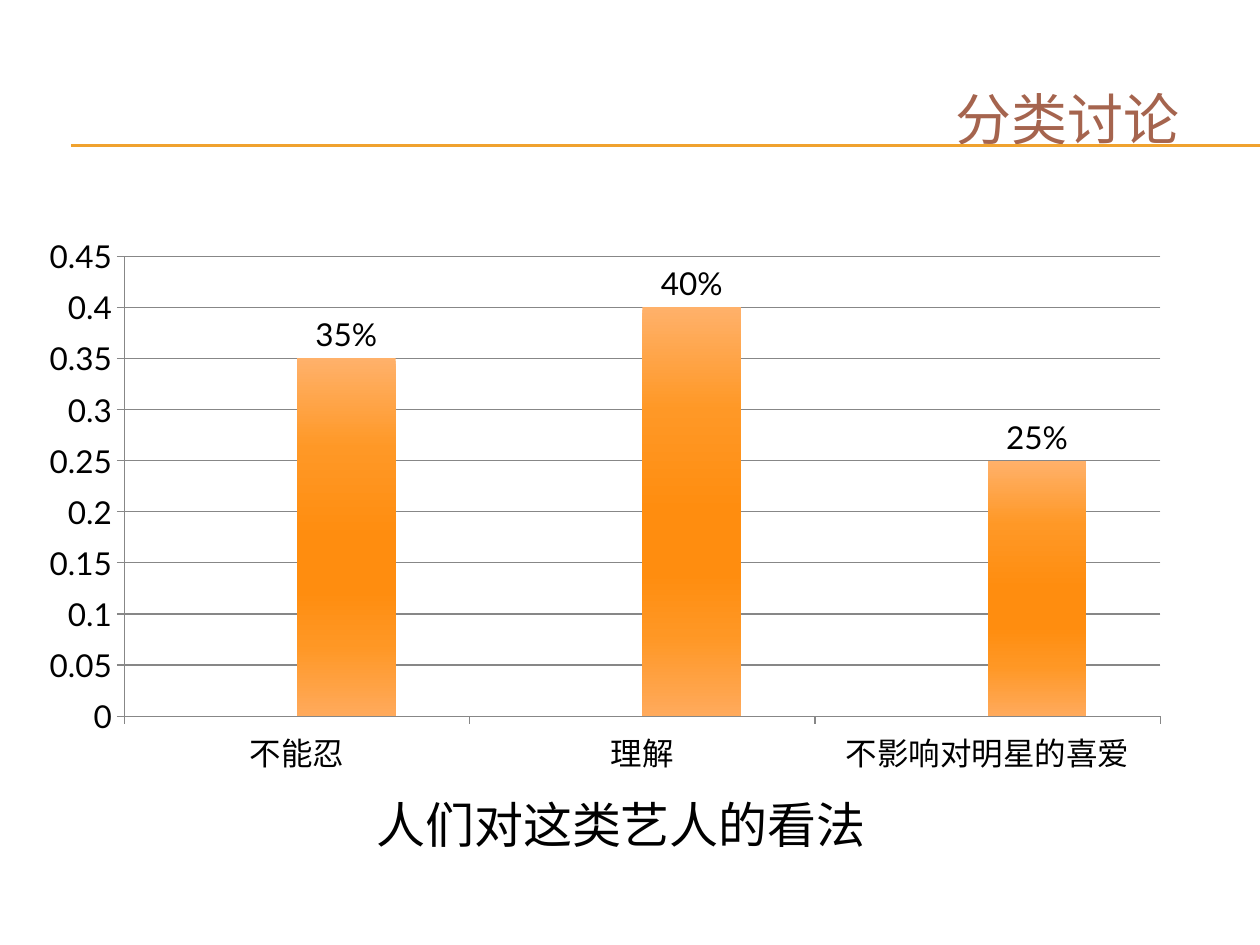
"""Build the survey slide on how people see this kind of artist."""
from lxml import etree
from pptx import Presentation
from pptx import util as u
from pptx.chart import data
from pptx.dml import color
from pptx.enum import chart as ch, shapes, text
from pptx.oxml import ns, parse_xml

PX_PER_INCH = 126
AMBER = "F0A22E"
GREY = "878787"
BLACK = "000000"
BAR_STOPS = [(0, "FFB16A"), (25, "FF9826"), (50, "FF8D0F"),
             (65, "FF8D0F"), (80, "FF9724"), (100, "FFAA5C")]
OPINIONS = {"不能忍": 0.35, "理解": 0.4, "不影响对明星的喜爱": 0.25}


def px(length):
    return u.Inches(length / PX_PER_INCH)


def rgb(value):
    return color.RGBColor.from_string(value)


def add_rule(slide, y):
    rule = slide.shapes.add_connector(
        shapes.MSO_CONNECTOR.STRAIGHT, px(71), px(y), px(1260), px(y))
    rule.line.color.rgb = rgb(AMBER)
    rule.line.width = u.Pt(0.75)
    etree.SubElement(rule._element.spPr, ns.qn("a:effectLst"))


def write_text(box, words, size, fill, align, left, top, width, height):
    box.left, box.top, box.width, box.height = map(px, (left, top, width, height))
    frame = box.text_frame
    frame.word_wrap = True
    frame.vertical_anchor = text.MSO_ANCHOR.TOP
    frame.auto_size = text.MSO_AUTO_SIZE.SHAPE_TO_FIT_TEXT
    paragraph = frame.paragraphs[0]
    paragraph.alignment = align
    run = paragraph.add_run()
    run.text = words
    run.font.name = "Arial"
    run.font.size = u.Pt(size)
    run.font.color.rgb = rgb(fill)


def fill_gradient(series, stops):
    series.format.fill.gradient()
    old = series._element.spPr.find(ns.qn("a:gradFill"))
    marks = "".join(f'<a:gs pos="{pos * 1000}"><a:srgbClr val="{value}"/></a:gs>'
                    for pos, value in stops)
    gradient = parse_xml(
        f'<a:gradFill {ns.nsdecls("a")} rotWithShape="1"><a:gsLst>{marks}</a:gsLst>'
        '<a:lin ang="5400000" scaled="0"/></a:gradFill>')
    old.getparent().replace(old, gradient)


def set_plot_area(chart, x, y, w, h):
    area = chart._chartSpace.chart.plotArea
    for old in area.findall(ns.qn("c:layout")):
        area.remove(old)
    sizes = "".join(f'<c:{key} val="{value}"/>'
                    for key, value in zip("xywh", (x, y, w, h)))
    area.insert(0, parse_xml(
        f'<c:layout {ns.nsdecls("c")}><c:manualLayout><c:layoutTarget val="inner"/>'
        f'<c:xMode val="edge"/><c:yMode val="edge"/>{sizes}</c:manualLayout></c:layout>'))


def style_axes(chart):
    values = chart.value_axis
    values.minimum_scale, values.maximum_scale, values.major_unit = 0, 0.45, 0.05
    values.has_major_gridlines = True
    values.tick_labels.number_format = "General"
    values.tick_labels.number_format_is_linked = False
    for axis in (chart.category_axis, values):
        axis.major_tick_mark = ch.XL_TICK_MARK.OUTSIDE
    for part in (chart.category_axis, values, values.major_gridlines):
        part.format.line.color.rgb = rgb(GREY)
        part.format.line.width = u.Pt(0.75)


def add_opinion_chart(slide):
    survey = data.CategoryChartData()
    survey.categories = list(OPINIONS)
    survey.add_series("Series 1", [None] * len(OPINIONS))
    survey.add_series("Series 2", OPINIONS.values())
    chart = slide.shapes.add_chart(
        ch.XL_CHART_TYPE.COLUMN_CLUSTERED, px(29), px(217), px(1191), px(561),
        survey).chart
    chart.has_legend = False
    chart.has_title = False
    chart.font.name = "Lato"
    chart.font.size = u.Pt(18)
    chart.font.color.rgb = rgb(BLACK)
    style_axes(chart)
    set_plot_area(chart, 0.08, 0.07, 0.87, 0.82)

    plot = chart.plots[0]
    plot.vary_by_categories = False
    plot.gap_width, plot.overlap = 150, 0
    blank, shares = plot.series
    blank.format.fill.solid()
    blank.format.fill.fore_color.rgb = rgb(AMBER)
    fill_gradient(shares, BAR_STOPS)
    labels = shares.data_labels
    labels.show_value = True
    labels.number_format = "0%"
    labels.number_format_is_linked = False
    labels.position = ch.XL_LABEL_POSITION.OUTSIDE_END


def main():
    deck = Presentation()
    deck.slide_width, deck.slide_height = px(1260), px(945)
    slide = deck.slides.add_slide(deck.slide_layouts[5])
    for y in (145, 146):
        add_rule(slide, y)
    add_opinion_chart(slide)
    caption = slide.shapes.add_textbox(0, 0, 0, 0)
    write_text(caption, "人们对这类艺人的看法", 28, BLACK, text.PP_ALIGN.LEFT,
               364, 788, 669, 72)
    write_text(slide.shapes.title, "分类讨论", 32, "A5644E", text.PP_ALIGN.RIGHT,
               808, 78, 384, 81)
    deck.save("out.pptx")


if __name__ == "__main__":
    main()
